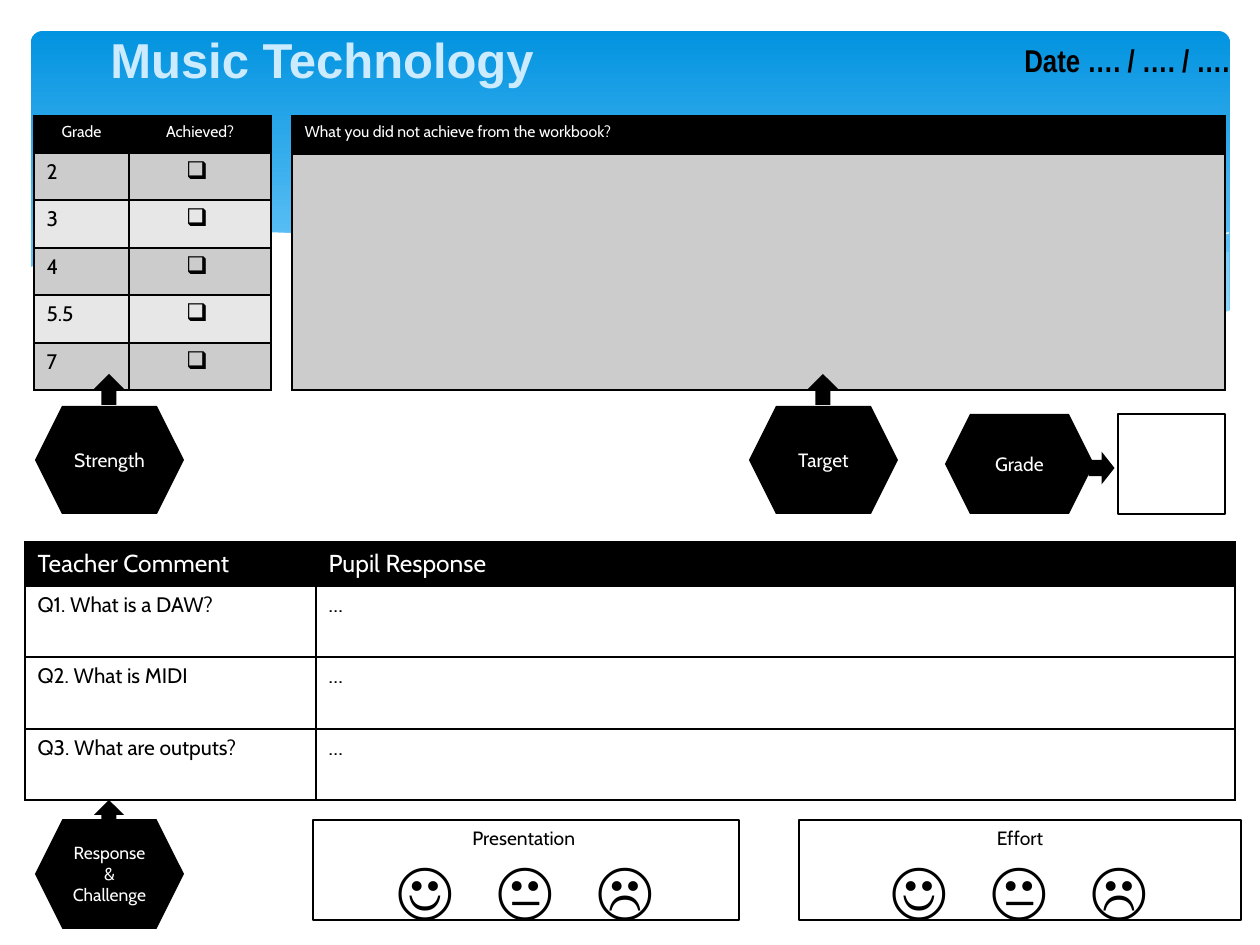
from dataclasses import dataclass

from lxml.etree import SubElement as Sub
from pptx import Presentation
from pptx.dml.color import RGBColor as RGB
from pptx.enum.shapes import MSO_SHAPE as SHAPE
from pptx.enum.text import MSO_ANCHOR as ANCHOR, PP_ALIGN as ALIGN
from pptx.oxml.ns import qn
from pptx.util import Pt

PX = 914400 / 126


@dataclass(frozen=True)
class Theme:
    black: str = "000000"
    white: str = "FFFFFF"
    sky_top: str = "0293E0"
    sky_low: str = "83D3FE"
    wave: str = "C6E7FC"
    title: str = "CDEBFF"
    title_line: str = "003D8E"
    dark: str = "CCCCCC"
    light: str = "E7E7E7"
    body: str = "Cabin"
    head: str = "Arial"
    narrow: str = "Arial Narrow"
    tiny: float = 9
    small: float = 10
    label: float = 11
    text: float = 12
    header: float = 14
    box: float = 14
    date: float = 18
    big: float = 28
    face: float = 36


T = Theme()

BACK_WAVE = [(1229, 252), (1194, 257), (1142, 268), (1085, 281), (1014, 299), (919, 319),
             (833, 334), (888, 341), (954, 348), (1012, 350), (1076, 348), (1130, 340),
             (1178, 330), (1229, 311)]
MID_WAVE = [(1125, 344), (1055, 334), (977, 320), (890, 302), (793, 280), (717, 262),
            (648, 249), (586, 241), (529, 236), (479, 233), (413, 236), (360, 241),
            (431, 251), (509, 266), (566, 280), (668, 302), (757, 321), (838, 335),
            (910, 345), (989, 350), (1056, 350)]
LONG_LINE = [(389, 246), (441, 238), (505, 236), (567, 236), (643, 239), (733, 252),
             (838, 268), (957, 294), (1047, 316), (1143, 343)]
SHORT_LINE = [(772, 324), (847, 304), (907, 289), (978, 272), (1053, 257), (1128, 244),
              (1198, 236), (1229, 233)]
WHITE_WAVE = [(1231, 310), (1197, 323), (1159, 334), (1118, 341), (1071, 347), (1019, 349),
              (959, 347), (892, 340), (816, 330), (730, 315), (634, 294), (563, 277),
              (493, 261), (428, 248), (368, 239), (315, 234), (266, 232), (223, 232),
              (184, 233), (150, 236), (120, 241), (96, 246), (74, 251), (58, 256),
              (45, 261), (29, 268), (29, 415), (1231, 415)]


def px(*values):
    return [round(v * PX) for v in values]


def add_run(p, text, size, color=T.black, font=T.body, bold=False):
    r = p.add_run()
    r.text = text
    r.font.size, r.font.name, r.font.bold = Pt(size), font, bold
    r.font.color.rgb = RGB.from_string(color)
    return r


def paint(sp, fill=None, line=None, width=1):
    sp.shadow.inherit = False
    if fill:
        sp.fill.solid()
        sp.fill.fore_color.rgb = RGB.from_string(fill)
    else:
        sp.fill.background()
    if line:
        sp.line.color.rgb = RGB.from_string(line)
        sp.line.width = Pt(width)
    else:
        sp.line.fill.background()


def add_box(s, kind, box, fill=None, line=None, width=1):
    sp = s.shapes.add_shape(kind, *px(*box))
    paint(sp, fill, line, width)
    return sp


def add_wave(s, points, fill=None, line=None, opacity=None):
    builder = s.shapes.build_freeform(*points[0], scale=PX)
    builder.add_line_segments(points[1:], close=bool(fill))
    sp = builder.convert_to_shape()
    paint(sp, fill, line, 0)
    if opacity:
        color = sp.fill._xPr.find(qn("a:solidFill"))[0]
        Sub(color, qn("a:alpha"), val=str(opacity * 1000))


def add_banner(s, box):
    sp = add_box(s, SHAPE.ROUNDED_RECTANGLE, box)
    sp.adjustments[0] = 0.034
    sp.fill.gradient()
    sp.fill.gradient_angle = 270
    for stop, at, color in zip(sp.fill.gradient_stops, (0, 0.9), (T.sky_top, T.sky_low)):
        stop.position = at
        stop.color.rgb = RGB.from_string(color)
    add_wave(s, BACK_WAVE, T.wave, opacity=29)
    add_wave(s, MID_WAVE, T.wave, opacity=40)
    add_wave(s, LONG_LINE, line=T.white)
    add_wave(s, SHORT_LINE, line=T.white)
    add_wave(s, WHITE_WAVE, T.white)


def add_text(s, box, text, size, color, font, align, wrap):
    tf = s.shapes.add_textbox(*px(*box)).text_frame
    tf.word_wrap = wrap
    p = tf.paragraphs[0]
    p.alignment = align
    return add_run(p, text, size, color, font, True)


def add_heading(s, box):
    x, y, w, h = box
    r = add_text(s, (x, y, 596, h), "Music Technology", T.big, T.title, T.head,
                 ALIGN.CENTER, False)
    rpr = r.font._element
    ln = Sub(rpr, qn("a:ln"), w=str(Pt(1)))
    Sub(Sub(ln, qn("a:solidFill")), qn("a:srgbClr"), val=T.title_line)
    rpr.insert(0, ln)
    add_text(s, (x + w - 247, y + 12, 248, 50), "Date …. / …. / ….", T.date, T.black,
             T.narrow, ALIGN.RIGHT, True)


def add_borders(cell):
    tcpr = cell._tc.get_or_add_tcPr()
    for n, side in enumerate(("lnL", "lnR", "lnT", "lnB")):
        ln = Sub(tcpr, qn("a:" + side), w=str(Pt(1)))
        Sub(Sub(ln, qn("a:solidFill")), qn("a:srgbClr"), val=T.black)
        tcpr.insert(n, ln)


def add_checkbox(cell):
    p = cell.text_frame.paragraphs[0]
    p.alignment = ALIGN.CENTER
    ppr = p._p.get_or_add_pPr()
    indent, = px(22)
    ppr.set("marL", str(indent))
    ppr.set("indent", str(-indent))
    Sub(ppr, qn("a:buChar"), char="❑")
    add_run(p, " ", T.box)


def add_grid(s, at, cols, rows, texts, sizes, bands, header_align=ALIGN.LEFT):
    frame = s.shapes.add_table(len(rows), len(cols), *px(*at, sum(cols), sum(rows)))
    table = frame.table
    table.first_row = table.horz_banding = False
    for col, w in zip(table.columns, px(*cols)):
        col.width = w
    for i, (row, h) in enumerate(zip(table.rows, px(*rows))):
        row.height = h
        fill = bands[(i - 1) % len(bands)] if i else T.black
        for cell, text in zip(row.cells, texts[i]):
            cell.fill.solid()
            cell.fill.fore_color.rgb = RGB.from_string(fill)
            add_borders(cell)
            if text:
                p = cell.text_frame.paragraphs[0]
                p.alignment = ALIGN.LEFT if i else header_align
                add_run(p, text, sizes[min(i, 1)], T.black if i else T.white)
    return table


def add_grades(s, at):
    grades = [(grade, "") for grade in ("2", "3", "4", "5.5", "7")]
    table = add_grid(s, at, (95, 142), (37, 47, 48, 47, 48, 47),
                     [("Grade", "Achieved?")] + grades, (T.tiny, T.text),
                     (T.dark, T.light), ALIGN.CENTER)
    for row in range(1, len(table.rows)):
        add_checkbox(table.cell(row, 1))


def add_badge(s, box, text, size):
    tf = add_box(s, SHAPE.HEXAGON, box, T.black).text_frame
    tf.word_wrap = True
    tf.vertical_anchor = ANCHOR.MIDDLE
    p = tf.paragraphs[0]
    p.alignment = ALIGN.CENTER
    add_run(p, text, size, T.white)


def add_pointer(s, box, text, size, rise):
    x, y, w, h = box
    add_badge(s, box, text, size)
    add_box(s, SHAPE.UP_ARROW, (x + w // 2 - 15, y - rise, 30, 31), T.black)


def add_grade(s, box):
    x, y, w, h = box
    add_badge(s, (x, y, 149, h), "Grade", T.label)
    arrow = add_box(s, SHAPE.UP_ARROW, (x + 140, y + 41, 33, 26), T.black)
    arrow.rotation = 90
    add_box(s, SHAPE.RECTANGLE, (x + w - 107, y, 107, h), line=T.black, width=1.25)


def add_rating(s, box, text):
    tf = add_box(s, SHAPE.RECTANGLE, box, line=T.black).text_frame
    tf.word_wrap = True
    tf.vertical_anchor = ANCHOR.TOP
    p = tf.paragraphs[0]
    p.alignment = ALIGN.CENTER
    add_run(p, text, T.label)
    p = tf.add_paragraph()
    p.alignment = ALIGN.LEFT
    tabs = Sub(p._p.get_or_add_pPr(), qn("a:tabLst"))
    middle = box[2] // 2 - 13
    for stop in px(middle - 100, middle, middle + 100):
        Sub(tabs, qn("a:tab"), pos=str(stop), algn="ctr")
    add_run(p, "\t☺\t😐\t☹", T.face)


def main():
    prs = Presentation()
    prs.slide_width, prs.slide_height = px(1260, 945)
    s = prs.slides.add_slide(prs.slide_layouts[6])
    add_banner(s, (31, 31, 1199, 340))
    add_grades(s, (34, 116))
    questions = [(q, "…") for q in ("Q1. What is a DAW?", "Q2. What is MIDI",
                                    "Q3. What are outputs?")]
    add_grid(s, (25, 542), (291, 919), (44, 71, 72, 71),
             [("Teacher Comment", "Pupil Response")] + questions,
             (T.header, T.text), (T.white,))
    add_grid(s, (292, 116), (933,), (38, 236),
             [("What you did not achieve from the workbook?",), ("",)],
             (T.tiny, T.text), (T.dark,))
    add_pointer(s, (35, 406, 149, 108), "Strength", T.label, 32)
    add_pointer(s, (749, 406, 149, 108), "Target", T.label, 32)
    add_pointer(s, (35, 819, 149, 110), "Response & Challenge", T.small, 19)
    add_grade(s, (945, 414, 280, 100))
    add_rating(s, (313, 820, 426, 100), "Presentation ")
    add_rating(s, (799, 820, 442, 100), "Effort")
    add_heading(s, (24, 23, 1217, 72))
    prs.save("out.pptx")


if __name__ == "__main__":
    main()
